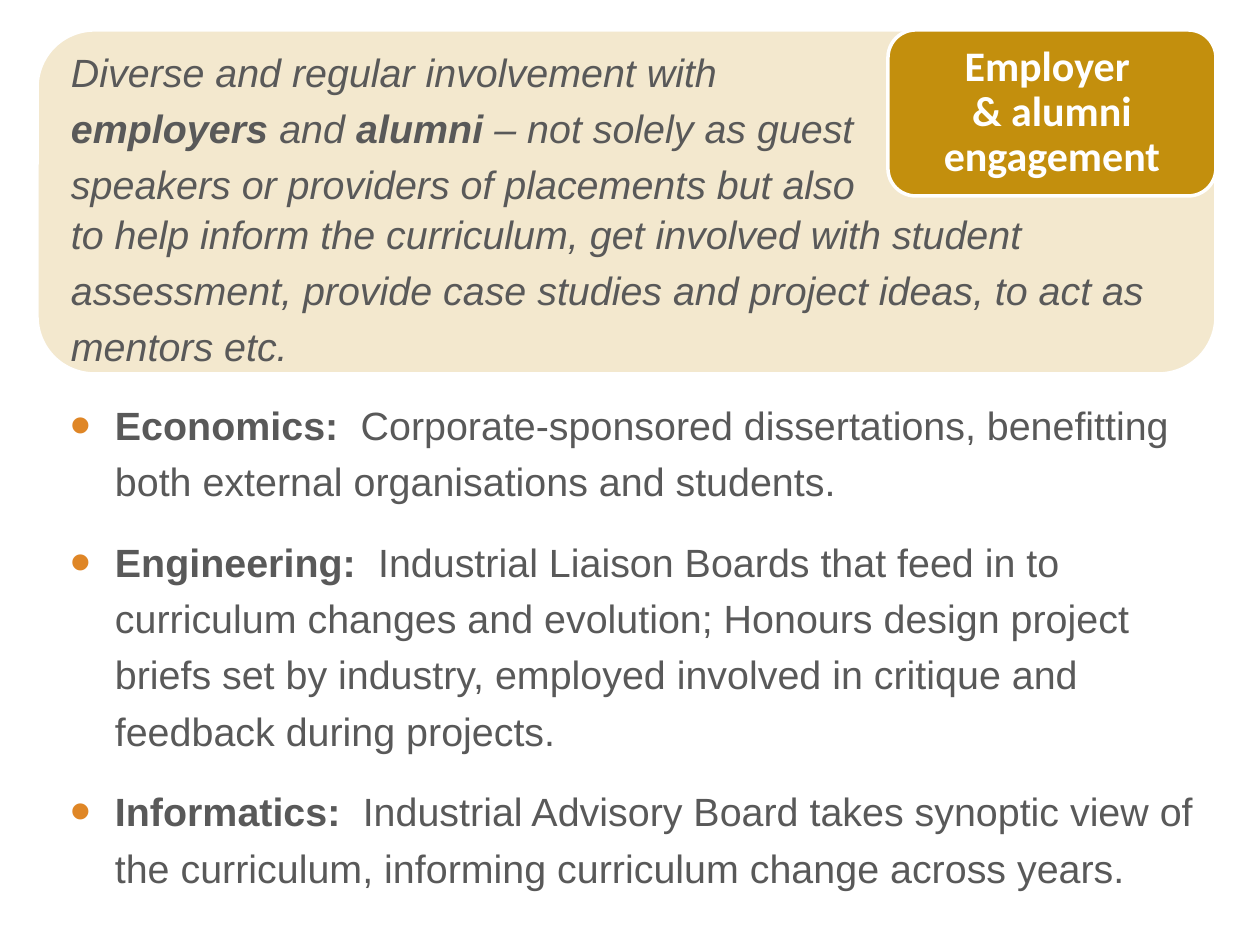
from lxml import etree
from pptx import Presentation
from pptx.dml.color import RGBColor
from pptx.enum.shapes import MSO_SHAPE
from pptx.enum.text import MSO_ANCHOR, PP_ALIGN
from pptx.oxml.ns import qn
from pptx.util import Pt

PX = 914400 // 126
ROUND = MSO_SHAPE.ROUNDED_RECTANGLE
MIDDLE = MSO_ANCHOR.MIDDLE
CENTER = PP_ALIGN.CENTER
GOLD, WHITE, GREY, ORANGE = "C38F0D", "FFFFFF", "595959", "DF8626"


def color(code):
    return RGBColor.from_string(code)


def write(para, parts, italic, indent, hang):
    para.line_spacing = 1.19
    para.space_before = Pt(14)
    props = para._p.get_or_add_pPr()
    props.set("marL", str(indent * PX))
    props.set("indent", str(-hang * PX))
    for text, bold in parts:
        run = para.add_run()
        run.text = text
        font = run.font
        font.name, font.size = "Arial", Pt(22.5)
        font.bold, font.italic = bold, italic
        font.color.rgb = color(GREY)
    return props


prs = Presentation()
prs.slide_width, prs.slide_height = 1260 * PX, 945 * PX
slide = prs.slides.add_slide(prs.slide_layouts[6])
shapes = slide.shapes

panels = []
for box in [(37, 30, 1179, 344), (888, 30, 328, 166)]:
    panel = shapes.add_shape(ROUND, *[n * PX for n in box])
    panel.shadow.inherit = False
    panel.fill.solid()
    panel.fill.fore_color.rgb = color(GOLD)
    panel.line.color.rgb = color(WHITE)
    panel.line.width = Pt(2)
    panels.append(panel)

card, tag = panels
tint = card._element.spPr.find(qn("a:solidFill"))[0]
etree.SubElement(tint, qn("a:alpha")).set("val", "20000")

frame = tag.text_frame
frame.word_wrap = True
frame.vertical_anchor = MIDDLE
frame.margin_left = frame.margin_right = 16 * PX
frame.margin_top = frame.margin_bottom = 16 * PX
label = frame.paragraphs[0]
label.text = "Employer \v& alumni engagement"
label.alignment = CENTER
label.line_spacing = 0.9
for run in label.runs:
    run.font.name, run.font.size = "Calibri", Pt(24)
    run.font.bold = True
    run.font.color.rgb = color(WHITE)

lead = [
    ("Diverse and regular involvement with ", False),
    ("employers", True),
    (" and ", False),
    ("alumni", True),
    (" – not solely as guest speakers or providers of placements but also", False),
]
rest = [(
    "to help inform the curriculum, get involved with student assessment, "
    "provide case studies and project ideas, to act as mentors etc.", False)]
cases = [
    ("Economics:  ", "Corporate-sponsored dissertations, benefitting both "
     "external organisations and students."),
    ("Engineering:  ", "Industrial Liaison Boards that feed in to curriculum "
     "changes and evolution; Honours design project briefs set by industry, "
     "employed involved in critique and feedback during projects."),
    ("Informatics:  ", "Industrial Advisory Board takes synoptic view of the "
     "curriculum, informing curriculum change across years."),
]
points = [[(head, True), (body, False)] for head, body in cases]

blocks = [
    ((37, 30, 859, 166), [lead], False),
    ((37, 192, 1173, 166), [rest], False),
    ((37, 383, 1189, 438), points, True),
]
for box, paras, listed in blocks:
    frame = shapes.add_textbox(*[n * PX for n in box]).text_frame
    frame.word_wrap = True
    frame.margin_left = frame.margin_right = 9 * PX
    frame.margin_top = frame.margin_bottom = 9 * PX
    for i, parts in enumerate(paras):
        para = frame.add_paragraph() if i else frame.paragraphs[0]
        if not listed:
            write(para, parts, True, 25, 0)
            continue
        props = write(para, parts, False, 69, 44)
        tone = etree.SubElement(props, qn("a:buClr"))
        etree.SubElement(tone, qn("a:srgbClr")).set("val", ORANGE)
        etree.SubElement(props, qn("a:buSzPct")).set("val", "150000")
        etree.SubElement(props, qn("a:buFont")).set("typeface", "Arial")
        etree.SubElement(props, qn("a:buChar")).set("char", "•")

prs.save("out.pptx")
